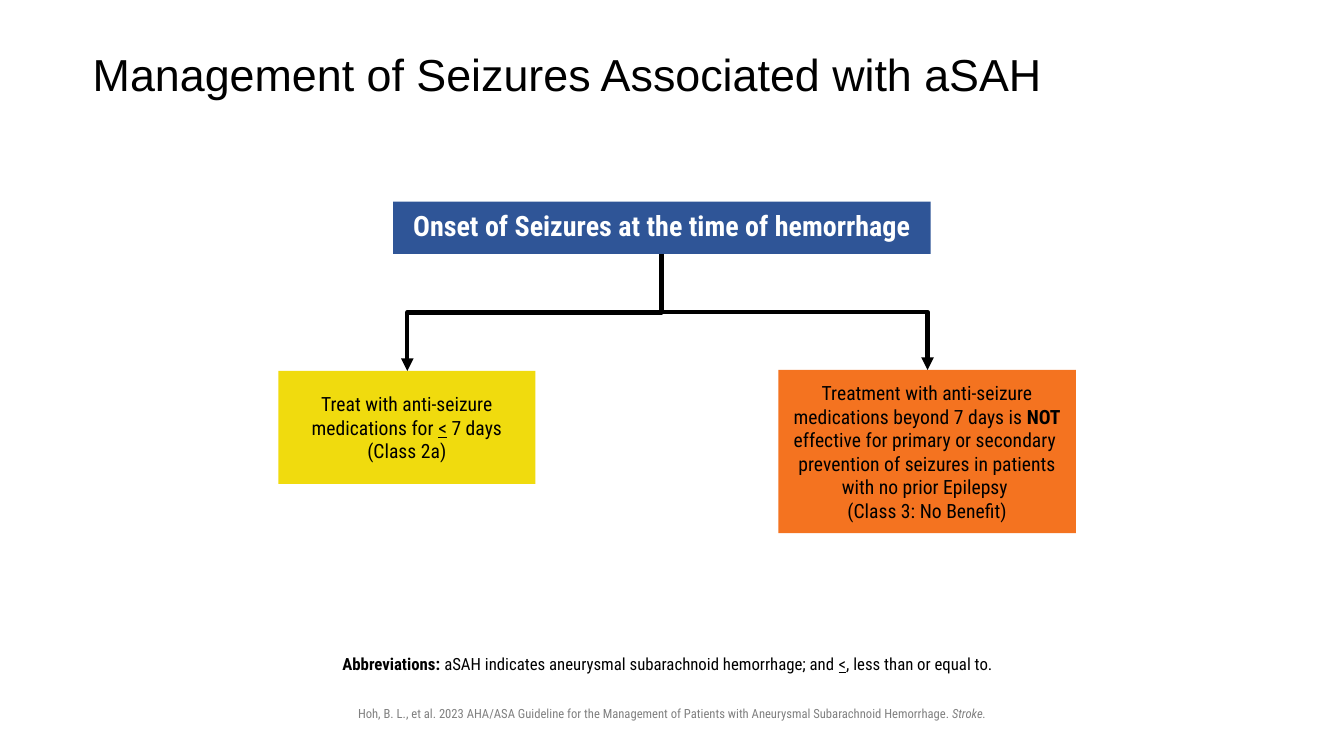
from dataclasses import dataclass

from lxml.etree import SubElement
from pptx import Presentation
from pptx.dml.color import RGBColor
from pptx.enum.shapes import MSO_CONNECTOR, MSO_SHAPE
from pptx.enum.text import MSO_ANCHOR, PP_ALIGN
from pptx.oxml.ns import qn
from pptx.util import Inches, Pt


@dataclass(frozen=True)
class Theme:
    title_font: str = "Arial"
    body_font: str = "Roboto Condensed"
    black: str = "000000"
    white: str = "FFFFFF"
    grey: str = "808080"
    blue: str = "2F5597"
    yellow: str = "F0DB0E"
    orange: str = "F47320"
    title_size: int = 32
    heading_size: int = 20
    box_size: int = 14
    note_size: int = 12
    citation_size: int = 9
    arrow_width: int = 3


THEME = Theme()
NO_INSETS = (0, 0, 0, 0)
BOX_INSETS = (0.1, 0.05, 0.1, 0.05)


def write_text(sp, paragraphs, *, size, font=THEME.body_font, color=THEME.black,
               align=PP_ALIGN.CENTER, anchor=MSO_ANCHOR.MIDDLE,
               insets=BOX_INSETS, line_spacing=1.0):
    """Fill a shape; each paragraph is a list of (text, style) runs.

    A style holds any of the letters b, i and u.
    """
    tf = sp.text_frame
    tf.word_wrap = True
    tf.vertical_anchor = anchor
    tf.margin_left, tf.margin_top, tf.margin_right, tf.margin_bottom = map(Inches, insets)
    for index, runs in enumerate(paragraphs):
        p = tf.add_paragraph() if index else tf.paragraphs[0]
        p.alignment = align
        p.line_spacing = line_spacing
        for text, style in runs:
            for line_index, line in enumerate(text.split("\n")):
                if line_index:
                    p.add_line_break()
                r = p.add_run()
                r.text = line
                r.font.name = font
                r.font.size = Pt(size)
                r.font.color.rgb = RGBColor.from_string(color)
                r.font.bold = "b" in style
                r.font.italic = "i" in style
                r.font.underline = "u" in style


def add_text(s, box, paragraphs, **text_format):
    sp = s.shapes.add_textbox(*map(Inches, box))
    write_text(sp, paragraphs, **text_format)


def add_box(s, box, fill, paragraphs, **text_format):
    sp = s.shapes.add_shape(MSO_SHAPE.RECTANGLE, *map(Inches, box))
    sp.shadow.inherit = False
    sp.fill.solid()
    sp.fill.fore_color.rgb = RGBColor.from_string(fill)
    sp.line.fill.background()
    write_text(sp, paragraphs, **text_format)


def add_branch(s, start, end):
    """Draw an elbow arrow that leaves downwards, turns halfway and ends downwards."""
    (x1, y1), (x2, y2) = start, end
    mid_x, mid_y = (x1 + x2) / 2, (y1 + y2) / 2
    half_w, half_h = (y2 - y1) / 2, abs(x2 - x1) / 2
    goes_right = x2 > x1
    side = half_w if goes_right else -half_w
    connector = s.shapes.add_connector(
        MSO_CONNECTOR.ELBOW,
        Inches(mid_x + side), Inches(mid_y - half_h),
        Inches(mid_x - side), Inches(mid_y + half_h))
    sp_pr = connector._element.spPr
    sp_pr.find(qn("a:xfrm")).set("rot", str((270 if goes_right else 90) * 60000))
    connector.line.color.rgb = RGBColor.from_string(THEME.black)
    connector.line.width = Pt(THEME.arrow_width)
    SubElement(sp_pr.find(qn("a:ln")), qn("a:tailEnd"), type="triangle")
    SubElement(sp_pr, qn("a:effectLst"))


def main():
    prs = Presentation()
    prs.slide_width, prs.slide_height = Inches(13.33), Inches(7.5)
    s = prs.slides.add_slide(prs.slide_layouts[6])

    add_text(s, (2.94, 6.95, 7.45, 0.25), [[
        ("Hoh, B. L., et al. 2023 AHA/ASA Guideline for the Management of Patients "
         "with Aneurysmal Subarachnoid Hemorrhage. ", ""),
        ("Stroke.", "i"),
    ]], size=THEME.citation_size, color=THEME.grey, anchor=MSO_ANCHOR.TOP)

    add_text(s, (0.92, 0.4, 11.5, 0.72),
             [[("Management of Seizures Associated with aSAH", "")]],
             size=THEME.title_size, font=THEME.title_font, align=PP_ALIGN.LEFT,
             insets=NO_INSETS, line_spacing=0.9)

    add_box(s, (3.9, 2, 5.33, 0.52), THEME.blue,
            [[("Onset of Seizures at the time of hemorrhage", "b")]],
            size=THEME.heading_size, color=THEME.white,
            insets=NO_INSETS, line_spacing=0.9)

    add_box(s, (2.76, 3.68, 2.55, 1.12), THEME.yellow, [[
        ("Treat with anti-seizure medications for ", ""),
        ("<", "u"),
        (" 7 days\n(Class 2a)", ""),
    ]], size=THEME.box_size)

    add_box(s, (7.72, 3.67, 2.95, 1.62), THEME.orange, [
        [("Treatment with anti-seizure medications beyond 7 days is ", ""),
         ("NOT", "b"),
         (" effective for primary or secondary ", "")],
        [("prevention of seizures in patients with no prior Epilepsy \n"
          "(Class 3: No Benefit)", "")],
    ], size=THEME.box_size)

    onset_bottom = (6.56, 2.52)
    for treatment_top in ((4.04, 3.68), (9.2, 3.67)):
        add_branch(s, onset_bottom, treatment_top)

    add_text(s, (0.92, 6.46, 11.5, 0.3), [[
        ("Abbreviations: ", "b"),
        ("aSAH indicates aneurysmal subarachnoid hemorrhage; and ", ""),
        ("<", "u"),
        (", less than or equal to.", ""),
    ]], size=THEME.note_size, anchor=MSO_ANCHOR.TOP,
        insets=(0, 0.05, 0.1, 0.05), line_spacing=0.9)

    prs.save("out.pptx")


if __name__ == "__main__":
    main()
